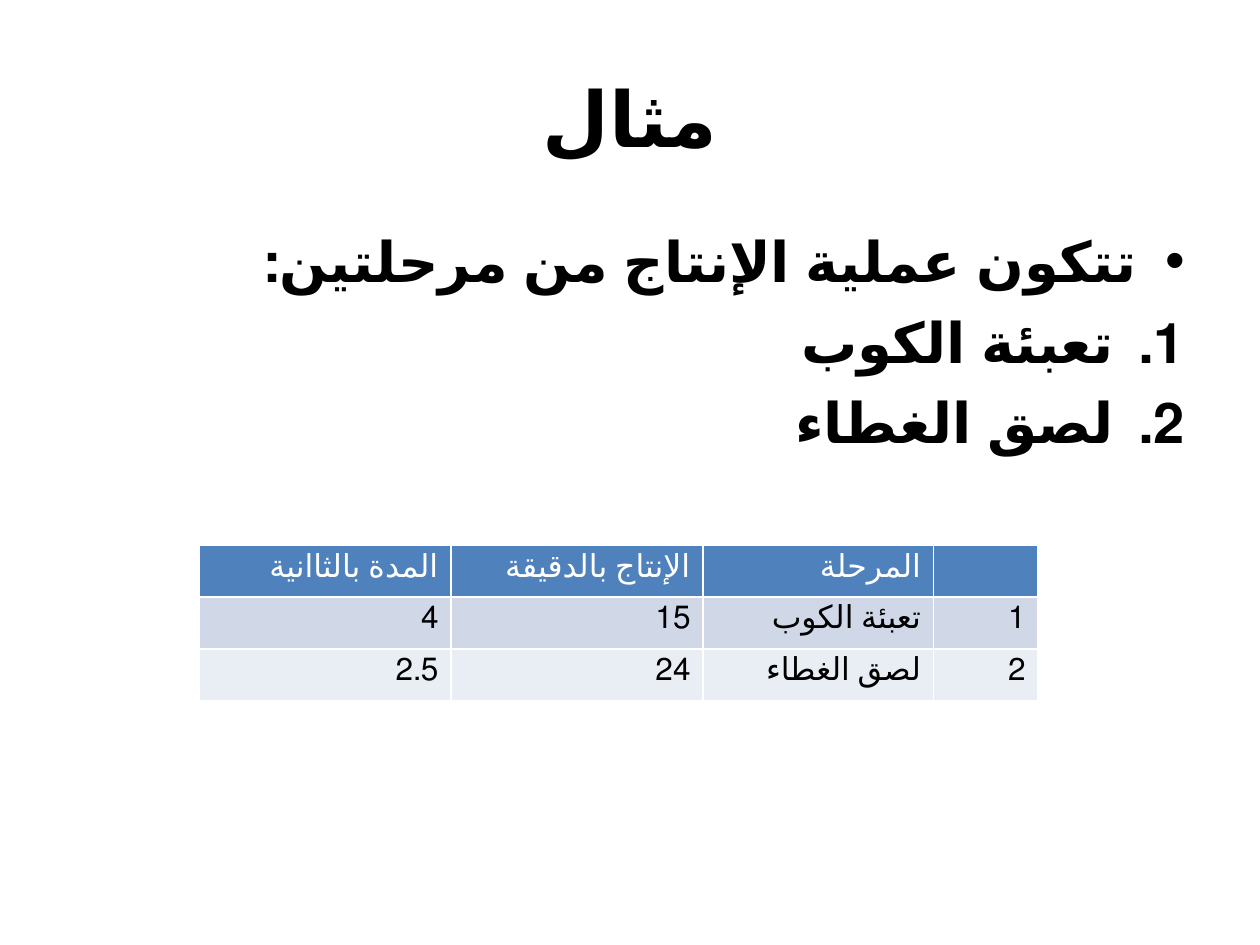
"""Build a slide with a two-stage production example and its table of rates."""
from dataclasses import dataclass

import lxml.etree
import pptx
import pptx.dml.color
import pptx.enum.lang
import pptx.enum.text
import pptx.oxml.ns
import pptx.util

Inches = pptx.util.Inches
FONT = "Calibri"
BLACK = "000000"
WHITE = "FFFFFF"
COLUMN_WIDTHS = (2, 2, 1.83, 0.83)
ROW_HEIGHT = 0.41


@dataclass(frozen=True)
class ListItem:
    text: str
    indent: float
    bullet_tag: str
    bullet_attributes: dict[str, str]


@dataclass(frozen=True)
class TableRow:
    texts: tuple[str, ...]
    fill: str
    color: str


NUMBERED = ("buAutoNum", {"type": "arabicPeriod"})
ITEMS = (
    ListItem("تتكون عملية الإنتاج من مرحلتين:", 0.38, "buChar", {"char": "•"}),
    ListItem("تعبئة الكوب", 0.56, *NUMBERED),
    ListItem("لصق الغطاء", 0.56, *NUMBERED),
)
ROWS = (
    TableRow(("المدة بالثاانية", "الإنتاج بالدقيقة", "المرحلة", ""), "4F81BD", WHITE),
    TableRow(("4", "15", "تعبئة الكوب", "1"), "D0D8E8", BLACK),
    TableRow(("2.5", "24", "لصق الغطاء", "2"), "E9EDF4", BLACK),
)


def rgb(color: str) -> pptx.dml.color.RGBColor:
    """Turn a hex string into a colour."""
    return pptx.dml.color.RGBColor.from_string(color)


def write_arabic(paragraph, text: str, size: int, color: str, bold: bool,
                 alignment=pptx.enum.text.PP_ALIGN.RIGHT) -> None:
    """Write right-to-left text and format its runs."""
    paragraph.text = text
    paragraph.alignment = alignment
    paragraph._p.get_or_add_pPr().set("rtl", "1")
    for run in paragraph.runs:
        run.font.name = FONT
        run.font.size = pptx.util.Pt(size)
        run.font.bold = bold
        run.font.color.rgb = rgb(color)
        run.font.language_id = pptx.enum.lang.MSO_LANGUAGE_ID.ARABIC


def add_title(slide, text: str) -> None:
    """Place and fill the title placeholder."""
    title = slide.shapes.title
    title.left, title.top = Inches(0.5), Inches(0.3)
    title.width, title.height = Inches(9), Inches(1.25)
    title.text_frame.vertical_anchor = pptx.enum.text.MSO_ANCHOR.MIDDLE
    write_arabic(title.text_frame.paragraphs[0], text, 44, BLACK, True,
                 pptx.enum.text.PP_ALIGN.CENTER)


def add_list(slide, items: tuple[ListItem, ...]) -> None:
    """Add the list of bulleted and numbered paragraphs."""
    text_frame = slide.shapes.add_textbox(
        Inches(0.5), Inches(1.75), Inches(9), Inches(4.95)).text_frame
    text_frame.word_wrap = True
    for index, item in enumerate(items):
        paragraph = text_frame.add_paragraph() if index else text_frame.paragraphs[0]
        write_arabic(paragraph, item.text, 32, BLACK, True)
        paragraph.space_before = pptx.util.Pt(7.5)
        properties = paragraph._p.get_or_add_pPr()
        properties.set("marL", str(Inches(item.indent)))
        properties.set("indent", str(-Inches(item.indent)))
        lxml.etree.SubElement(properties, pptx.oxml.ns.qn("a:buFont"), typeface="Arial")
        lxml.etree.SubElement(properties, pptx.oxml.ns.qn(f"a:{item.bullet_tag}"),
                              item.bullet_attributes)


def add_rate_table(slide, rows: tuple[TableRow, ...]) -> None:
    """Add the table of stages, output rates and durations."""
    table = slide.shapes.add_table(
        len(rows), len(COLUMN_WIDTHS), Inches(1.58), Inches(4.33),
        Inches(sum(COLUMN_WIDTHS)), Inches(ROW_HEIGHT * len(rows))).table
    for column, width in zip(table.columns, COLUMN_WIDTHS):
        column.width = Inches(width)
    for table_row, row in zip(table.rows, rows):
        table_row.height = Inches(ROW_HEIGHT)
        for cell, text in zip(table_row.cells, row.texts):
            cell.fill.solid()
            cell.fill.fore_color.rgb = rgb(row.fill)
            write_arabic(cell.text_frame.paragraphs[0], text, 18, row.color, False)


def main() -> None:
    """Build and save the presentation."""
    presentation = pptx.Presentation()
    presentation.slide_width, presentation.slide_height = Inches(10), Inches(7.5)
    slide = presentation.slides.add_slide(presentation.slide_layouts.get_by_name("Title Only"))
    add_title(slide, "مثال")
    add_list(slide, ITEMS)
    add_rate_table(slide, ROWS)
    presentation.save("out.pptx")


if __name__ == "__main__":
    main()
